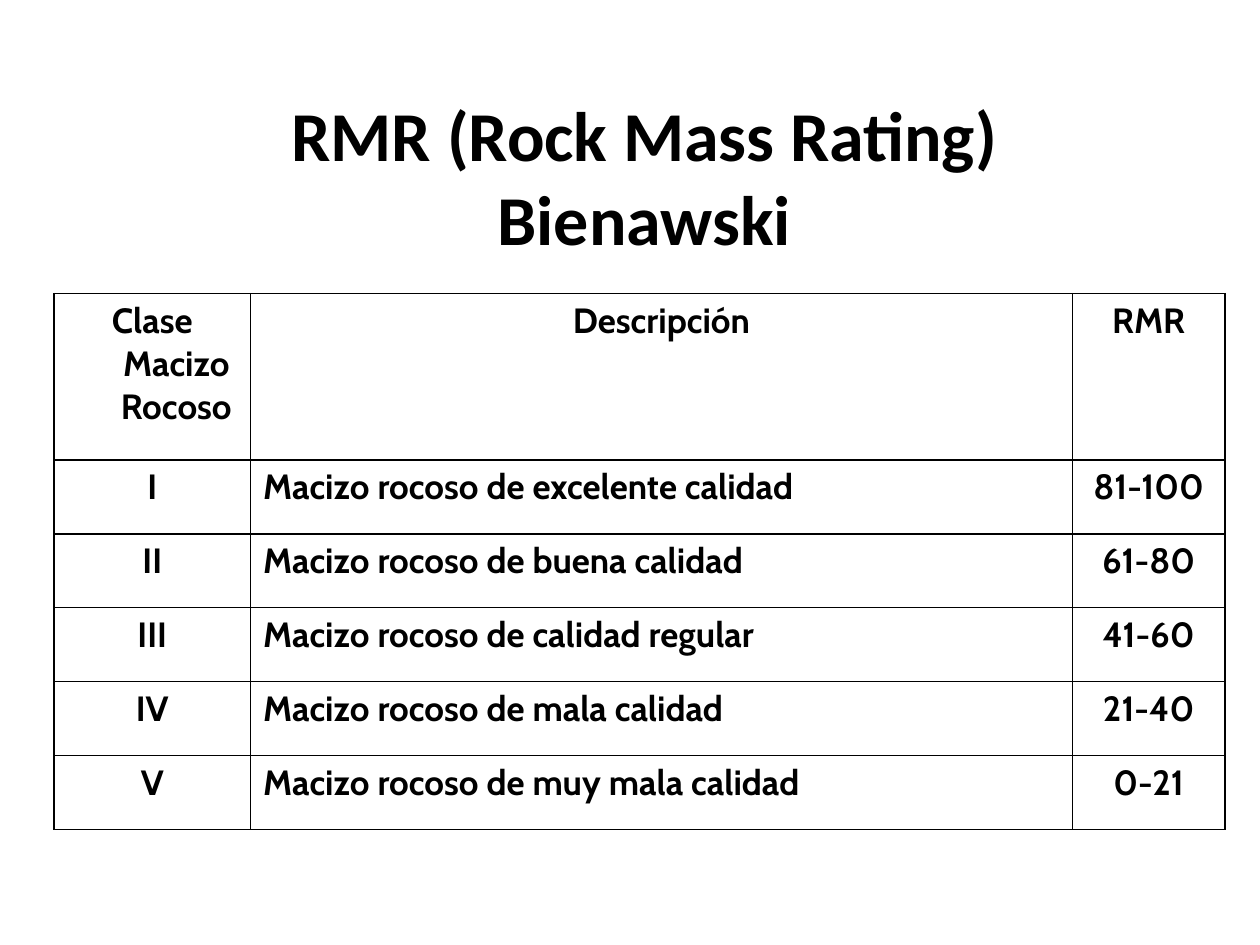
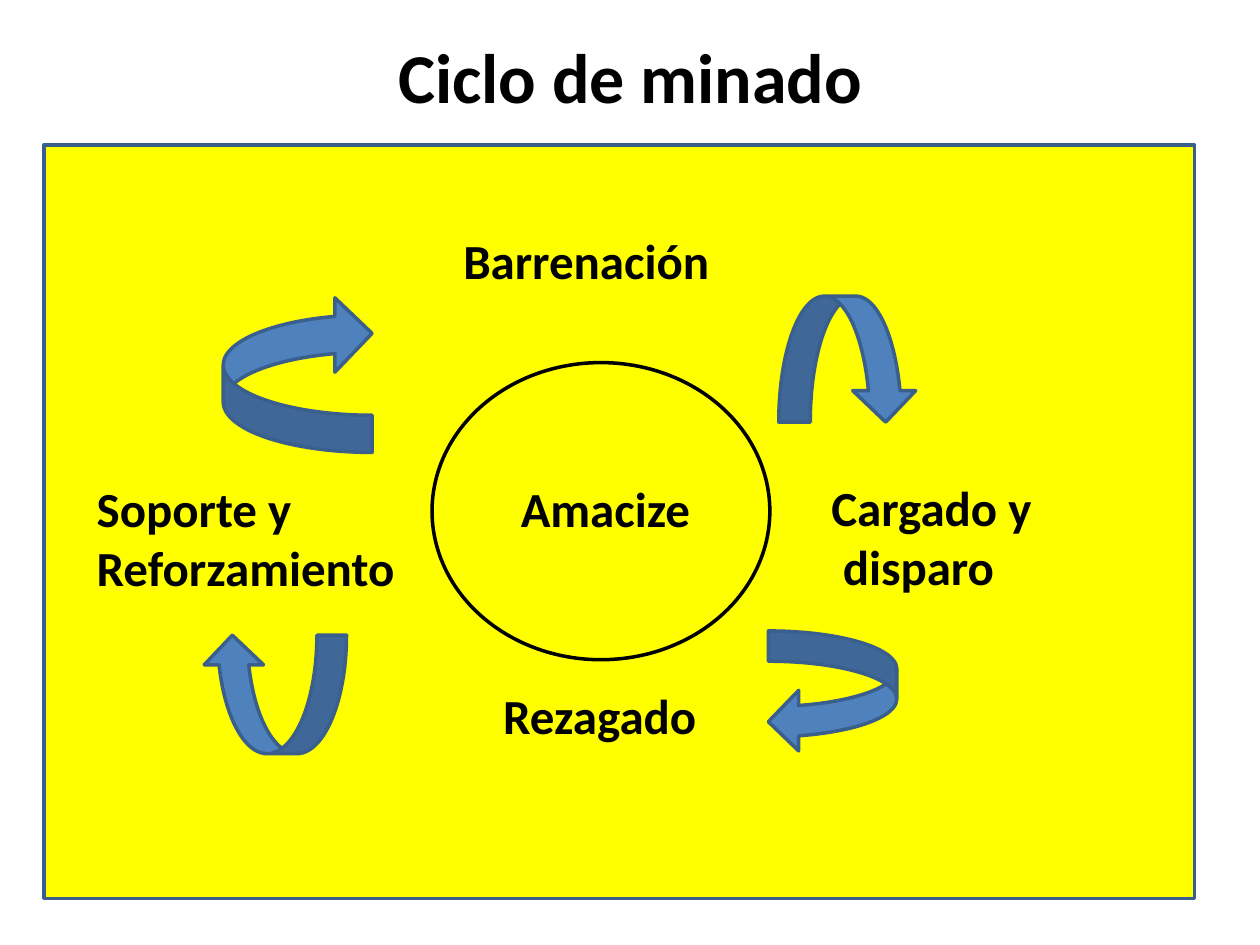
from dataclasses import dataclass

from lxml import etree
from pptx import Presentation
from pptx.dml.color import RGBColor
from pptx.enum import shapes, text
from pptx.oxml import ns
from pptx.util import Cm, Pt


@dataclass(frozen=True)
class Theme:
    ink: str = "000000"
    panel: str = "FFFF00"
    arrow: str = "4F81BD"
    edge: str = "3A5F8C"
    sans: str = "Calibri"
    grid: str = "Cabin"
    title: int = 40
    label: int = 28
    cell: int = 20
    line: int = 2
    rule: int = 1


THEME = Theme()
LEFT = text.PP_ALIGN.LEFT
MID = text.PP_ALIGN.CENTER
FULL = text.PP_ALIGN.JUSTIFY
SHAPE = shapes.MSO_SHAPE

HEADS = ["Clase Macizo Rocoso", "Descripción", "RMR"]
GRADES = [
    ("I", "excelente calidad", "81-100"),
    ("II", "buena calidad", "61-80"),
    ("III", "calidad regular", "41-60"),
    ("IV", "mala calidad", "21-40"),
    ("V", "muy mala calidad", "0-21"),
]
STEPS = [
    (["Barrenación"], (8.2, 1.6, 6.4, 1.45), {}),
    (["Cargado y", "disparo"], (15.62, 6.58, 7.8, 2.64), {"shift": 0.23}),
    (["Rezagado"], (8, 10.77, 6.4, 1.45), {"align": MID}),
    (["Amacize"], (9.22, 6.6, 4.19, 1.45), {"align": MID}),
    (["Soporte y Reforzamiento"], (0.81, 6.6, 7.01, 2.64), {}),
]
ARROWS = [
    (SHAPE.CURVED_DOWN_ARROW, (14.81, 3.05, 2.79, 2.54), 0),
    (SHAPE.CURVED_LEFT_ARROW, (14.6, 9.8, 2.59, 2.44), 0),
    (SHAPE.CURVED_LEFT_ARROW, (3.45, 9.63, 2.39, 2.9), 90),
    (SHAPE.CURVED_LEFT_ARROW, (3.61, 3.05, 3, 3.15), 180),
]


def place(box, part):
    return box[0] + part[0], box[1] + part[1], part[2], part[3]


def write(frame, lines, size=THEME.label, font=THEME.sans, align=LEFT, hang=0, shift=0):
    frame.word_wrap = True
    for i, line in enumerate(lines):
        para = frame.paragraphs[0] if i == 0 else frame.add_paragraph()
        para.alignment = align
        props = para._p.get_or_add_pPr()
        props.set("marL", str(Cm(hang + shift * i)))
        props.set("indent", str(Cm(-hang)))
        run = para.add_run()
        run.text = line
        run.font.size = Pt(size)
        run.font.name = font
        run.font.bold = True
        run.font.color.rgb = RGBColor.from_string(THEME.ink)


def label(slide, lines, box, **style):
    frame = slide.shapes.add_textbox(*map(Cm, box)).text_frame
    frame.auto_size = text.MSO_AUTO_SIZE.SHAPE_TO_FIT_TEXT
    write(frame, lines, **style)


def title(slide, line, box):
    label(slide, [line], box, size=THEME.title, align=MID)


def draw(slide, kind, box, fill=None, edge=THEME.edge, turn=0):
    shape = slide.shapes.add_shape(kind, *map(Cm, box))
    shape.shadow.inherit = False
    shape.rotation = turn
    if fill:
        shape.fill.solid()
        shape.fill.fore_color.rgb = RGBColor.from_string(fill)
    else:
        shape.fill.background()
    shape.line.color.rgb = RGBColor.from_string(edge)
    shape.line.width = Pt(THEME.line)


def frame_cell(cell):
    props = cell._tc.get_or_add_tcPr()
    for side in ("lnL", "lnR", "lnT", "lnB"):
        line = etree.SubElement(props, ns.qn(f"a:{side}"), w=str(Pt(THEME.rule)))
        fill = etree.SubElement(line, ns.qn("a:solidFill"))
        etree.SubElement(fill, ns.qn("a:srgbClr"), val=THEME.ink)
    cell.fill.background()


def rating(slide, box):
    rows = [HEADS] + [(mark, f"Macizo rocoso de {kind}", span) for mark, kind, span in GRADES]
    table = slide.shapes.add_table(len(rows), len(HEADS), *map(Cm, box)).table
    table.first_row = table.horz_banding = False
    first, last, head = 3.96, 3.07, 3.35
    widths = [first, box[2] - first - last, last]
    for col, width in zip(table.columns, widths):
        col.width = Cm(width)
    for r, row in enumerate(rows):
        table.rows[r].height = Cm((box[3] - head) / len(GRADES) if r else head)
        for c, words in enumerate(row):
            cell = table.cell(r, c)
            align = FULL if r and c == 1 else MID
            write(cell.text_frame, [words], size=THEME.cell, font=THEME.grid,
                  align=align, hang=0.97)
            frame_cell(cell)


def cycle(slide, box):
    draw(slide, SHAPE.RECTANGLE, box, THEME.panel)
    draw(slide, SHAPE.OVAL, place(box, (7.82, 4.39, 6.81, 5.99)), edge=THEME.ink)
    for lines, part, style in STEPS:
        label(slide, lines, place(box, part), **style)
    for kind, part, turn in ARROWS:
        draw(slide, kind, place(box, part), THEME.arrow, turn=turn)


def main():
    deck = Presentation()
    deck.slide_width, deck.slide_height = Cm(25.4), Cm(19.05)
    blank = deck.slide_layouts[6]

    slide = deck.slides.add_slide(blank)
    rating(slide, (1.09, 5.92, 23.6, 10.8))
    title(slide, "RMR (Rock Mass Rating) Bienawski", (2.69, 1.73, 20.6, 3.68))

    slide = deck.slides.add_slide(blank)
    cycle(slide, (0.89, 2.92, 23.19, 15.19))
    title(slide, "Ciclo de minado", (1.3, 0.56, 22.8, 1.96))

    deck.save("out.pptx")


if __name__ == "__main__":
    main()
